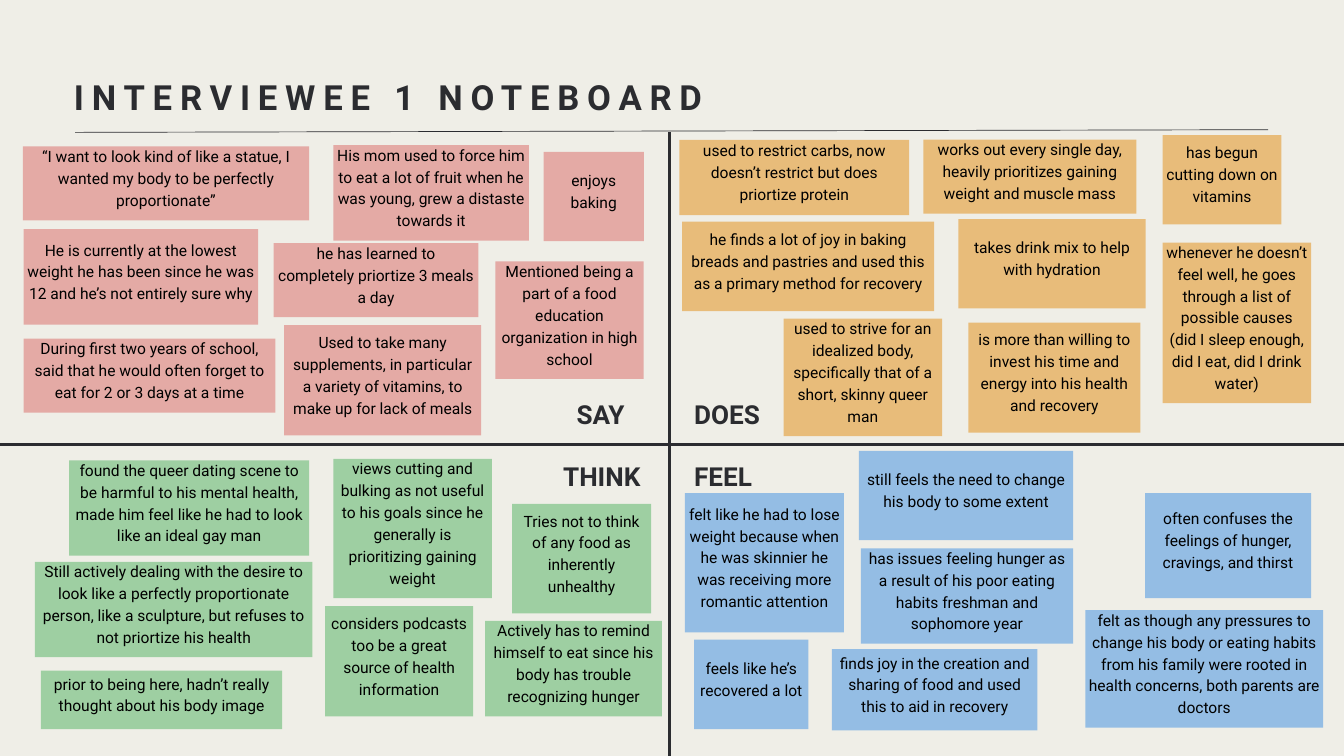
from lxml import etree
from pptx import Presentation
from pptx.dml.color import RGBColor
from pptx.enum import shapes, text
from pptx.oxml import ns
from pptx.util import Inches, Pt

COLOURS = {"paper": "EFEEE7", "ink": "2B2C30", "black": "000000",
           "say": "E4AAA5", "does": "E8BC7A", "think": "9ECFA2", "feel": "94BDE4"}
FONT = "Roboto"
WIDTH, HEIGHT = 20, 11.25
CENTRE, TOP, MIDDLE = 9.96, 1.97, 6.62
TEXT_RISE = 0.2

QUADRANTS = [
    ("say", (0, TOP), (8.58, 3.88, 0.99), [
        (0.34, 0.21, 4.26, 1.1, "“I want to look kind of like a statue, I wanted my body to be perfectly proportionate”"),
        (4.96, 0.19, 2.91, 1.42, "His mom used to force him to eat a lot of fruit when he was young, grew a distaste towards it"),
        (8.09, 0.29, 1.49, 1.33, "enjoys\nbaking"),
        (0.35, 1.44, 3.49, 1.42, "He is currently at the lowest weight he has been since he was 12 and he’s not entirely sure why"),
        (4.07, 1.65, 3.05, 1.1, "he has learned to completely priortize 3 meals a day"),
        (7.37, 1.92, 2.21, 1.75, "Mentioned being a part of a food education organization in high school"),
        (0.35, 3.07, 3.75, 1.1, "During first two years of school, said that he would often forget to eat for 2 or 3 days at a time"),
        (4.23, 2.87, 2.93, 1.64, "Used to take many supplements, in particular a variety of vitamins, to make up for lack of meals"),
    ]),
    ("does", (CENTRE, TOP), (0.37, 3.88, 1.49), [
        (0.15, 0.11, 3.42, 1.12, "used to restrict carbs, now doesn’t restrict but does priortize protein"),
        (3.78, 0.11, 3.17, 1.1, "works out every single day, heavily prioritizes gaining weight and muscle mass"),
        (7.34, 0.04, 1.77, 1.33, "has begun cutting down on vitamins"),
        (0.19, 1.33, 3.75, 1.33, "he finds a lot of joy in baking breads and pastries and used this as a primary method for recovery"),
        (4.3, 1.29, 2.79, 1.33, "takes drink mix to help with hydration"),
        (7.34, 1.64, 2.21, 2.39, "whenever he doesn’t feel well, he goes through a list of possible causes (did I sleep enough, did I eat, did I drink water)"),
        (1.7, 2.77, 2.36, 1.75, "used to strive for an idealized body, specifically that of a short, skinny queer man"),
        (4.45, 2.83, 2.56, 1.64, "is more than willing to invest his time and energy into his health and recovery"),
    ]),
    ("think", (0, MIDDLE), (8.38, 0.15, 1.4), [
        (1.03, 0.23, 3.57, 1.42, "found the queer dating scene to be harmful to his mental health, made him feel like he had to look like an ideal gay man"),
        (4.96, 0.21, 2.36, 2.07, "views cutting and bulking as not useful to his goals since he generally is prioritizing gaining weight"),
        (7.62, 0.88, 2.07, 1.63, "Tries not to think of any food as inherently unhealthy"),
        (0.52, 1.74, 4.13, 1.42, "Still actively dealing with the desire to look like a perfectly proportionate person, like a sculpture, but refuses to not priortize his health"),
        (4.84, 2.4, 2.2, 1.64, "considers podcasts too be a great source of health information"),
        (7.22, 2.62, 2.63, 1.42, "Actively has to remind himself to eat since his body has trouble recognizing hunger"),
        (0.61, 3.36, 3.59, 0.87, "prior to being here, hadn’t really thought about his body image"),
    ]),
    ("feel", (CENTRE, MIDDLE), (0.37, 0.15, 0.99), [
        (0.23, 0.72, 2.37, 2.07, "felt like he had to lose weight because when he was skinnier he was receiving more romantic attention"),
        (2.82, 0.09, 3.19, 1.33, "still feels the need to change his body to some extent"),
        (7.08, 0.72, 2.47, 1.56, "often confuses the feelings of hunger, cravings, and thirst"),
        (2.85, 1.54, 3.16, 1.42, "has issues feeling hunger as a result of his poor eating habits freshman and sophomore year"),
        (0.37, 2.9, 1.7, 1.33, "feels like he’s recovered a lot"),
        (2.42, 3.04, 3.06, 1.21, "finds joy in the creation and sharing of food and used this to aid in recovery"),
        (6.19, 2.46, 3.54, 1.75, "felt as though any pressures to change his body or eating habits from his family were rooted in health concerns, both parents are doctors"),
    ]),
]


def colour(name):
    """Return the named colour."""
    return RGBColor.from_string(COLOURS[name])


def add_text(parent, box, words, size, leading, ink="ink", bold=False, inset=0):
    """Add a wrapped text box and return its text frame."""
    frame = parent.shapes.add_textbox(*map(Inches, box)).text_frame
    frame.word_wrap = True
    frame.margin_left = frame.margin_right = Inches(inset)
    frame.margin_top = frame.margin_bottom = Inches(inset)
    frame.text = words
    for para in frame.paragraphs:
        para.line_spacing = Pt(leading)
        for span in para.runs:
            span.font.name = FONT
            span.font.size = Pt(size)
            span.font.bold = bold
            span.font.color.rgb = colour(ink)
    return frame


def add_rule(page, start, end, weight):
    """Draw a straight dark line between two points."""
    rule = page.shapes.add_connector(
        shapes.MSO_CONNECTOR.STRAIGHT, *map(Inches, start + end))
    rule.line.color.rgb = colour("ink")
    rule.line.width = Pt(weight)
    etree.SubElement(rule._element.spPr, ns.qn("a:effectLst"))


def add_note(page, box, words, fill):
    """Place a sticky note with its centred text as one group."""
    left, top, width, height = box
    note = page.shapes.add_group_shape()
    card = note.shapes.add_shape(shapes.MSO_SHAPE.RECTANGLE, *map(Inches, box))
    card.shadow.inherit = False
    card.fill.solid()
    card.fill.fore_color.rgb = colour(fill)
    card.line.fill.background()
    text_box = (left, top - TEXT_RISE, width, height + TEXT_RISE)
    frame = add_text(note, text_box, words, 16.7, 23.4, "black", inset=0.05)
    frame.vertical_anchor = text.MSO_ANCHOR.MIDDLE
    for para in frame.paragraphs:
        para.alignment = text.PP_ALIGN.CENTER


def add_quadrant(page, origin, name, heading, notes):
    """Place a heading and its notes relative to the quadrant's corner."""
    x, y = origin
    left, top, width = heading
    add_text(page, (x + left, y + top, width, 0.54), name.upper(), 28, 39.2, bold=True)
    for left, top, width, height, words in notes:
        add_note(page, (x + left, y + top, width, height), words, name)


def add_title(page, box):
    """Place the letter-spaced title in its box."""
    frame = add_text(page, box, "INTERVIEWEE 1 NOTEBOARD", 37.1, 52, bold=True)
    frame.paragraphs[0].runs[0]._r.get_or_add_rPr().set("spc", "840")


def main():
    """Build the slide and save the deck."""
    deck = Presentation()
    deck.slide_width, deck.slide_height = Inches(WIDTH), Inches(HEIGHT)
    page = deck.slides.add_slide(deck.slide_layouts[6])
    page.background.fill.solid()
    page.background.fill.fore_color.rgb = colour("paper")
    add_rule(page, (1.12, TOP), (18.87, 1.93), 0.75)
    add_rule(page, (0, MIDDLE), (WIDTH, MIDDLE), 3)
    add_rule(page, (CENTRE, TOP), (CENTRE, HEIGHT), 3)
    add_title(page, (1.1, 1.03, 17.75, 0.71))
    for name, origin, heading, notes in QUADRANTS:
        add_quadrant(page, origin, name, heading, notes)
    deck.save("out.pptx")


if __name__ == "__main__":
    main()
